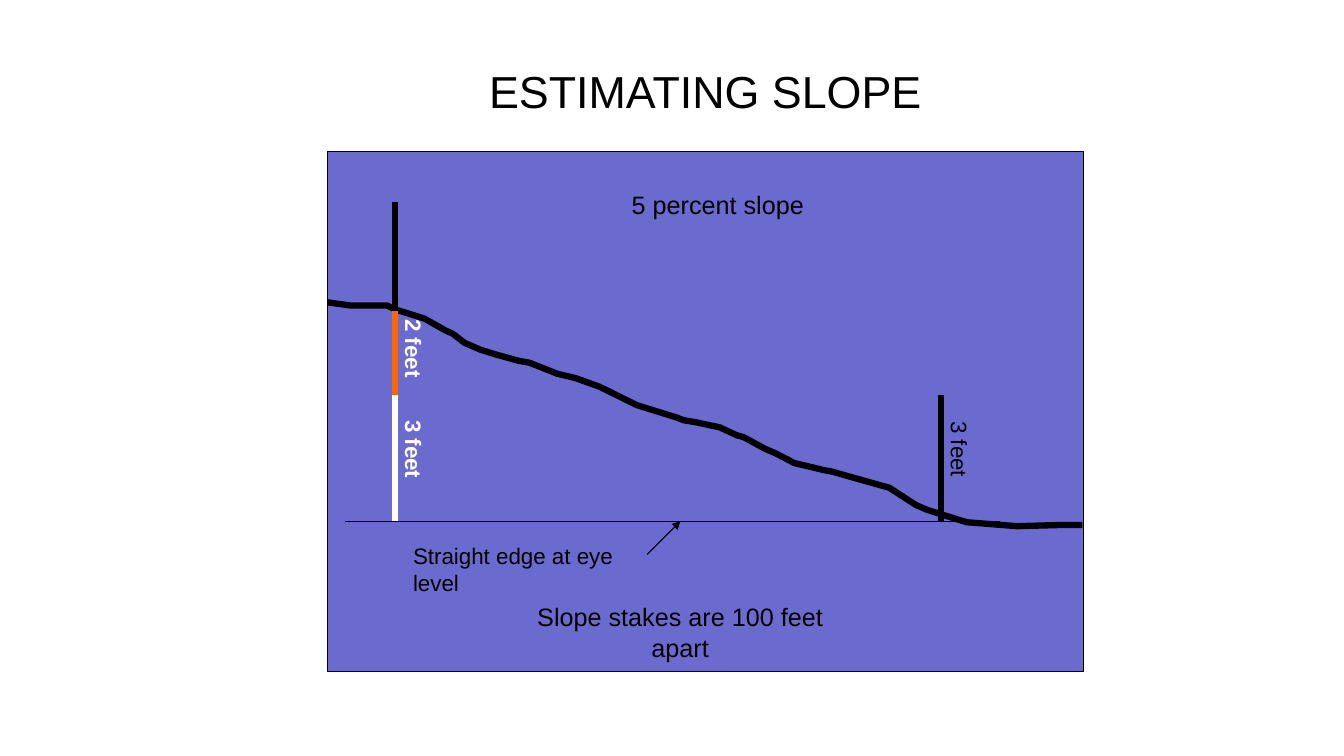
from lxml.etree import SubElement as Sub
from pptx import Presentation
from pptx.dml.color import RGBColor as RGB
from pptx.enum.shapes import MSO_CONNECTOR as Link, MSO_SHAPE as Kind
from pptx.enum.text import MSO_ANCHOR as Anchor, MSO_AUTO_SIZE as Fit, PP_ALIGN as Align
from pptx.oxml.ns import qn
from pptx.util import Cm, Pt

BLACK = RGB(0x00, 0x00, 0x00)
WHITE = RGB(0xFF, 0xFF, 0xFF)
BLUE = RGB(0x6B, 0x6B, 0xCF)
ORANGE = RGB(0xFF, 0x66, 0x00)

THIN, THICK = 0.75, 4.5
FOOT = 1.06
EYE = 9.32
LEFT, RIGHT = 1.7, 15.45

GROUND = [
    (0, 3.81), (0.58, 3.89), (1.5, 3.89), (1.7, 3.99), (1.93, 4.06),
    (2.44, 4.22), (2.97, 4.52), (3.15, 4.6), (3.45, 4.83), (3.84, 5),
    (4.19, 5.11), (4.8, 5.28), (5.08, 5.33), (5.79, 5.61), (6.25, 5.72),
    (6.86, 5.94), (7.79, 6.4), (8.79, 6.71), (8.97, 6.78), (9.27, 6.83),
    (9.88, 6.96), (10.31, 7.16), (10.49, 7.21), (11, 7.49), (11.3, 7.62),
    (11.76, 7.86), (12.27, 7.98), (12.47, 8.03), (12.73, 8.08),
    (13.08, 8.18), (13.79, 8.38), (14.15, 8.48), (14.83, 8.92),
    (15.11, 9.04), (15.27, 9.09), (16.1, 9.35), (17.37, 9.45),
    (18.47, 9.42), (19.02, 9.42),
]


def write(frame, text, size, color=BLACK, bold=False, align=Align.CENTER):
    para = frame.paragraphs[0]
    para.alignment = align
    para.space_before = Pt(0)
    run = para.add_run()
    run.text = text
    font = run.font
    font.name, font.size, font.bold = "Arial", Pt(size), bold
    font.color.rgb = color


def label(slide, box, place, text, size, turn=0, **style):
    x, y, wide, high = place
    item = slide.shapes.add_textbox(
        Cm(box[0] + x), Cm(box[1] + y), Cm(wide), Cm(high))
    item.rotation = turn
    item.text_frame.word_wrap = True
    write(item.text_frame, text, size, **style)


def line(slide, box, start, end, width, color=BLACK, arrow=False):
    ends = [Cm(base + part) for point in (start, end)
            for base, part in zip(box, point)]
    item = slide.shapes.add_connector(Link.STRAIGHT, *ends)
    item.line.width = Pt(width)
    item.line.color.rgb = color
    if arrow:
        Sub(item.line._get_or_add_ln(), qn("a:tailEnd"), type="triangle")
    Sub(item._element.spPr, qn("a:effectLst"))


def heading(slide, box):
    title = slide.shapes.title
    title.left, title.top, title.width, title.height = map(Cm, box)
    frame = title.text_frame
    frame.auto_size = Fit.NONE
    frame.vertical_anchor = Anchor.TOP
    write(frame, "ESTIMATING SLOPE", 32)


def panel(slide, box):
    item = slide.shapes.add_shape(Kind.RECTANGLE, *map(Cm, box))
    item.shadow.inherit = False
    item.fill.solid()
    item.fill.fore_color.rgb = BLUE
    item.line.color.rgb = BLACK
    item.line.width = Pt(THIN)


def ground(slide, box):
    points = [(Cm(x), Cm(y)) for x, y in GROUND]
    path = slide.shapes.build_freeform(*points[0])
    path.add_line_segments(points[1:], close=False)
    item = path.convert_to_shape(Cm(box[0]), Cm(box[1]))
    item.shadow.inherit = False
    item.fill.background()
    item.line.color.rgb = BLACK
    item.line.width = Pt(THICK)


def stakes(slide, box):
    three = EYE - 3 * FOOT
    five = EYE - 5 * FOOT
    for x, top, low, color in (
            (LEFT, 1.27, five, BLACK), (LEFT, three, EYE, WHITE),
            (LEFT, five, three, ORANGE), (RIGHT, three, EYE, BLACK)):
        line(slide, box, (x, top), (x, low), THICK, color)
    for x, y, text, color, bold in (
            (LEFT, 4.5, "2 feet", WHITE, True),
            (LEFT, 7.04, "3 feet", WHITE, True),
            (RIGHT, 7.04, "3 feet", BLACK, False)):
        label(slide, box, (x - 0.9, y, 2.74, 0.94), text, 16, 90,
              color=color, bold=bold)


def diagram(slide, box):
    panel(slide, box)
    ground(slide, box)
    line(slide, box, (16.94, EYE), (0.43, EYE), THIN)
    stakes(slide, box)
    line(slide, box, (8.05, 10.16), (8.89, EYE), THIN, arrow=True)
    label(slide, box, (2.74, 0.84, 14.18, 1.02), "5 percent slope", 18)
    label(slide, box, (1.9, 9.73, 6.35, 1.63),
          "Straight edge at eye level", 16, align=Align.LEFT)
    label(slide, box, (4.65, 11.23, 8.46, 1.8),
          "Slope stakes are 100 feet apart", 18)


def main():
    deck = Presentation()
    deck.slide_width, deck.slide_height = Cm(33.87), Cm(19.05)
    slide = deck.slides.add_slide(deck.slide_layouts[5])
    heading(slide, (8.89, 1.48, 17.78, 1.9))
    diagram(slide, (8.26, 3.81, 19.05, 13.12))
    deck.save("out.pptx")


if __name__ == "__main__":
    main()
